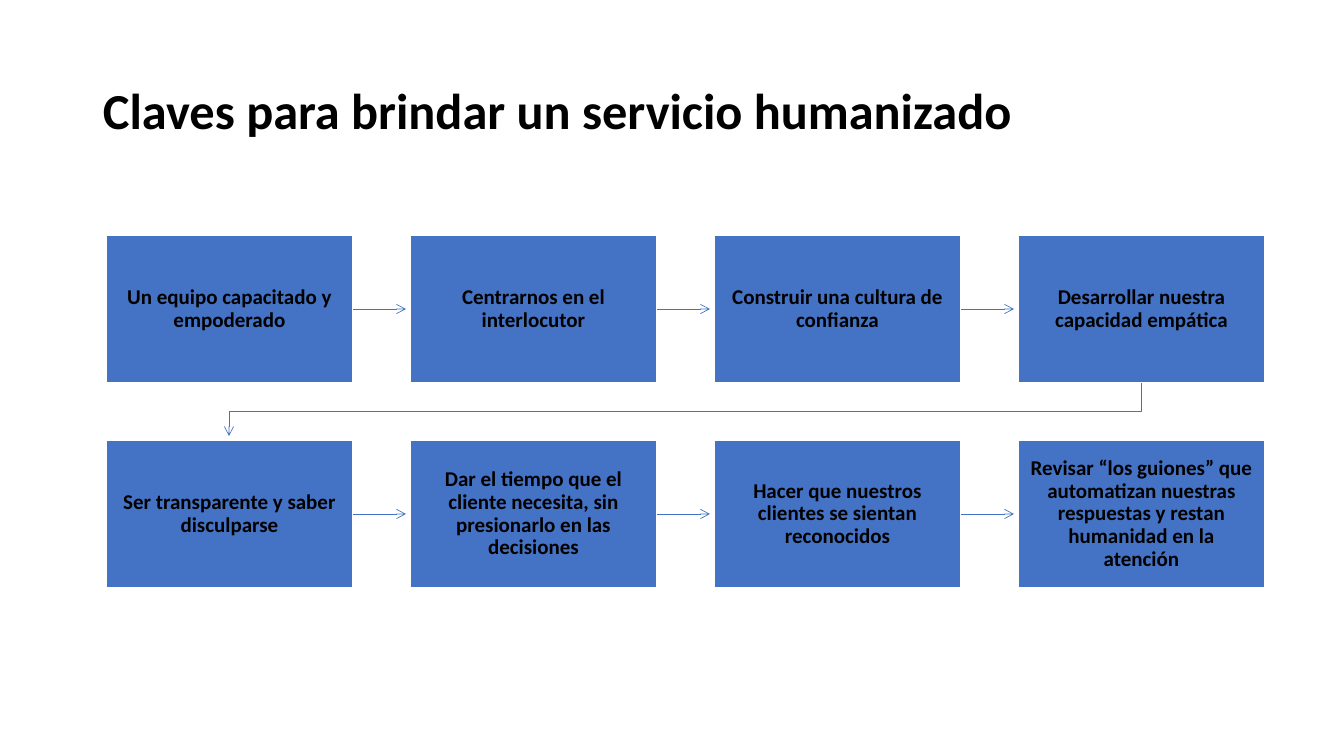
from pptx import Presentation
from pptx.dml.color import RGBColor
from pptx.enum.shapes import MSO_CONNECTOR, MSO_SHAPE
from pptx.enum.text import MSO_ANCHOR, PP_ALIGN
from pptx.oxml.ns import qn
from pptx.util import Emu, Pt
from lxml import etree

RECT = MSO_SHAPE.RECTANGLE
STRAIGHT = MSO_CONNECTOR.STRAIGHT
MIDDLE = MSO_ANCHOR.MIDDLE
LEFT, CENTER = PP_ALIGN.LEFT, PP_ALIGN.CENTER
BOTTOM_SIDE, RIGHT_SIDE = 2, 3

THEME = {
    "font": "Calibri",
    "blue": RGBColor(0x44, 0x72, 0xC4),
    "white": RGBColor(0xFF, 0xFF, 0xFF),
    "black": RGBColor(0, 0, 0),
    "title": Pt(36),
    "step": Pt(15),
    "edge": Pt(1),
    "arrow": Pt(0.5),
}
PX = 914400 / 100.8

STEPS = [
    ["Un equipo capacitado y empoderado",
     "Centrarnos en el interlocutor",
     "Construir una cultura de confianza",
     "Desarrollar nuestra capacidad empática"],
    ["Ser transparente y saber disculparse",
     "Dar el tiempo que el cliente necesita, sin presionarlo en las decisiones",
     "Hacer que nuestros clientes se sientan reconocidos",
     "Revisar “los guiones” que automatizan nuestras respuestas "
     "y restan humanidad en la atención"],
]
GRID_X, GRID_Y = 106, 235
BOX_W, BOX_H = 247, 148
STEP_X, STEP_Y = 304, 205
TIP_GAP = 4


def write(shape, text, size, align):
    frame = shape.text_frame
    frame.word_wrap = True
    frame.vertical_anchor = MIDDLE
    para = frame.paragraphs[0]
    para.alignment = align
    para.line_spacing = 0.9
    run = para.add_run()
    run.text = text
    run.font.name = THEME["font"]
    run.font.size = size
    run.font.bold = True
    run.font.color.rgb = THEME["black"]


def style_arrow(arrow):
    """Give a line its thin blue stroke and open head, without shadow."""
    arrow.line.color.rgb = THEME["blue"]
    arrow.line.width = THEME["arrow"]
    props = arrow._element.spPr
    etree.SubElement(props.find(qn("a:ln")), qn("a:tailEnd"), type="arrow")
    etree.SubElement(props, qn("a:effectLst"))


deck = Presentation()
deck.slide_width, deck.slide_height = Emu(12192000), Emu(6858000)
slide = deck.slides.add_slide(deck.slide_layouts[6])
shapes = slide.shapes

title = shapes.add_textbox(*[Emu(round(n * PX)) for n in (93, 40, 1159, 146)])
write(title, "Claves para brindar un servicio humanizado", THEME["title"], LEFT)

for row, texts in enumerate(STEPS):
    for col, text in enumerate(texts):
        x, y = GRID_X + col * STEP_X, GRID_Y + row * STEP_Y
        box = shapes.add_shape(
            RECT, *[Emu(round(n * PX)) for n in (x, y, BOX_W, BOX_H)])
        box.shadow.inherit = False
        box.fill.solid()
        box.fill.fore_color.rgb = THEME["blue"]
        box.line.color.rgb = THEME["white"]
        box.line.width = THEME["edge"]
        frame = box.text_frame
        frame.margin_left = frame.margin_right = Emu(round(12 * PX))
        frame.margin_top = frame.margin_bottom = Emu(round(13 * PX))
        write(box, text, THEME["step"], CENTER)

        if col < len(texts) - 1:
            mid = y + BOX_H // 2
            ends = (x + BOX_W, mid, x + STEP_X - TIP_GAP, mid)
            arrow = shapes.add_connector(
                STRAIGHT, *[Emu(round(n * PX)) for n in ends])
            arrow.begin_connect(box, RIGHT_SIDE)
            style_arrow(arrow)

# The turn from the last step of the first row to the start of the second
first = GRID_X + BOX_W // 2
last = first + (len(STEPS[0]) - 1) * STEP_X
base, below = GRID_Y + BOX_H, GRID_Y + STEP_Y
turn = (base + below) // 2
pen = shapes.build_freeform(last, base, scale=PX)
pen.add_line_segments(
    [(last, turn), (first, turn), (first, below - TIP_GAP)], close=False)
bend = pen.convert_to_shape()
bend.fill.background()
style_arrow(bend)

deck.save("out.pptx")
